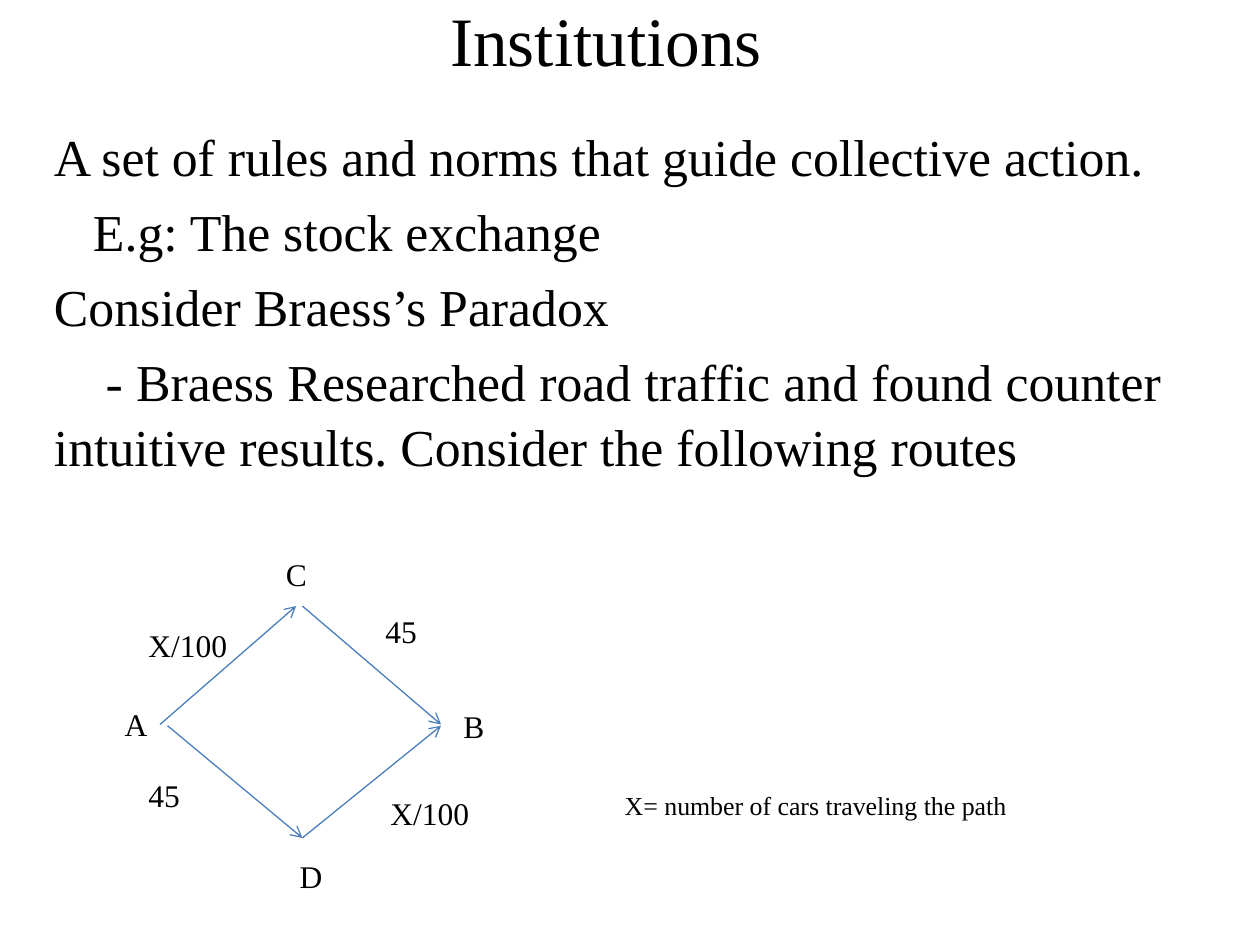
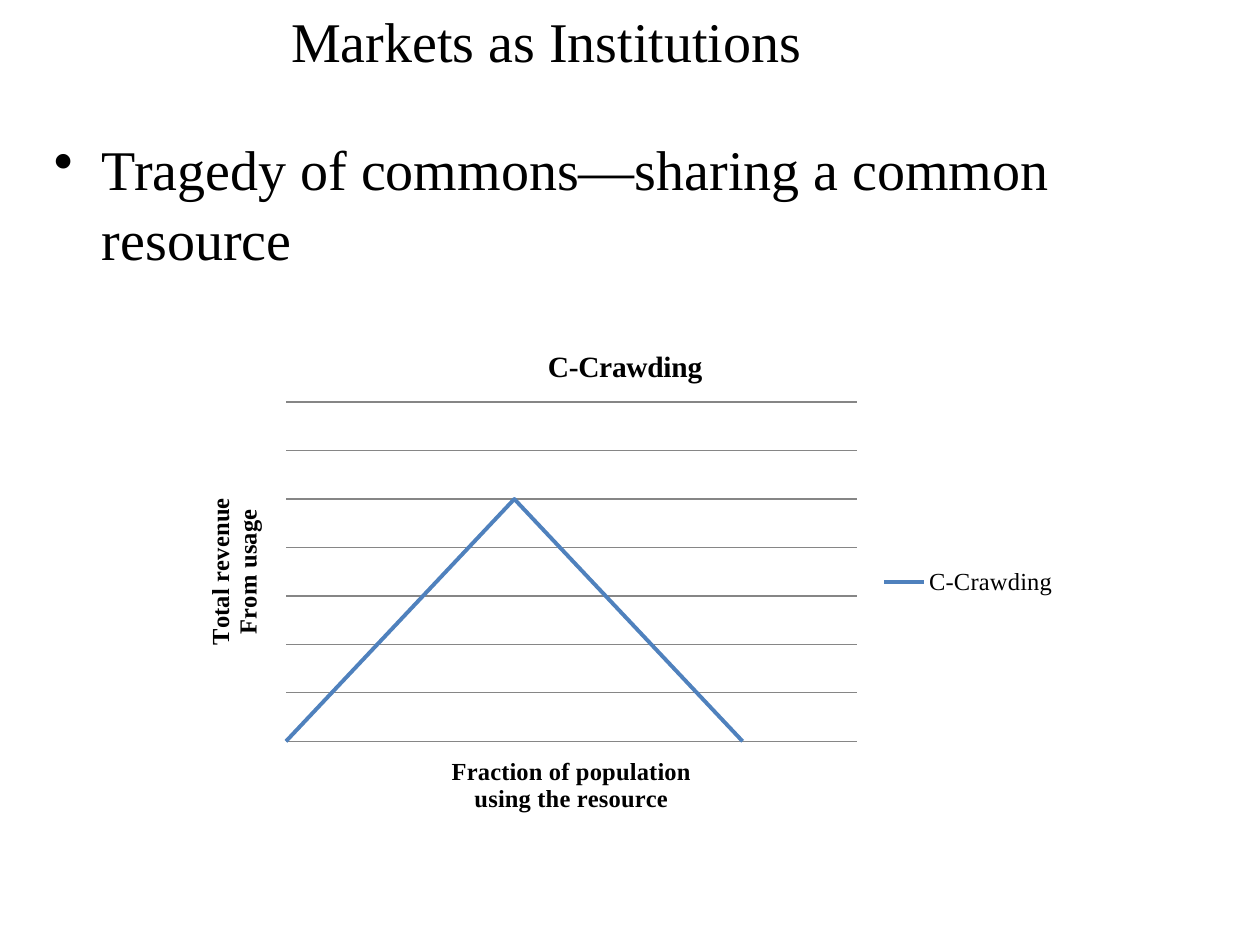
from lxml import etree
from pptx import Presentation
from pptx import util as u
from pptx.chart import data
from pptx.dml.color import RGBColor
from pptx.enum import chart as ch
from pptx.enum import shapes, text
from pptx.oxml import parse_xml
from pptx.oxml.ns import nsdecls, qn

FONT = "Times New Roman"
BLACK = RGBColor(0x00, 0x00, 0x00)
ARROW_BLUE = RGBColor(0x4B, 0x7E, 0xBC)
CURVE_BLUE = RGBColor(0x4F, 0x81, 0xBD)
GRID_GREY = RGBColor(0x86, 0x86, 0x86)
LEFT, CENTER, JUSTIFY = (text.PP_ALIGN.LEFT, text.PP_ALIGN.CENTER,
                         text.PP_ALIGN.JUSTIFY)


def write(frame, words, size=18, bold=False, align=None, before=None,
          spacing=None, margin=0, indent=0, bullet=None):
    """Add one formatted paragraph, filling the first one if it is empty."""
    first = frame.paragraphs[0]
    para = frame.add_paragraph() if first.runs else first
    run = para.add_run()
    run.text = words
    font = run.font
    font.name, font.size, font.bold = FONT, u.Pt(size), bold
    font.color.rgb = BLACK
    if align is not None:
        para.alignment = align
    if before is not None:
        para.space_before = u.Pt(before)
    if spacing is not None:
        para.line_spacing = spacing
    if margin or indent:
        props = para._p.get_or_add_pPr()
        props.set("marL", str(u.Inches(margin)))
        props.set("indent", str(u.Inches(indent)))
    if bullet:
        etree.SubElement(para._p.get_or_add_pPr(), qn("a:buChar")).set("char", bullet)


def place(shape, left, top, width, height, anchor=text.MSO_ANCHOR.TOP, wrap=True):
    """Position a text shape and return its frame."""
    shape.left, shape.top = u.Inches(left), u.Inches(top)
    shape.width, shape.height = u.Inches(width), u.Inches(height)
    frame = shape.text_frame
    frame.word_wrap = wrap
    frame.auto_size = text.MSO_AUTO_SIZE.NONE
    frame.vertical_anchor = anchor
    return frame


prs = Presentation()
prs.slide_width, prs.slide_height = u.Inches(10), u.Inches(7.5)
title_only = prs.slide_layouts[5]

# Slide 1: institutions and Braess's paradox
institutions = prs.slides.add_slide(title_only)
heading = place(institutions.shapes.title, 1.02, 0, 7.58, 0.62,
                text.MSO_ANCHOR.MIDDLE)
write(heading, "Institutions", size=39.6, align=CENTER)

body = place(institutions.shapes.add_textbox(0, 0, 0, 0), 0.33, 0.92, 9, 3.2)
for statement, indent, align in [
    ("A set of rules and norms that guide collective action.", 0, LEFT),
    ("E.g: The stock exchange", 0.31, LEFT),
    ("Consider Braess’s Paradox", 0, LEFT),
    ("- Braess Researched road traffic and found counter intuitive results. "
     "Consider the following routes", 0.41, JUSTIFY),
]:
    write(body, statement, size=29.6, align=align, before=5.92, spacing=1.04,
          indent=indent)

# Junctions and travel times of the road network
for label, left, top, width in [
    ("C", 2.17, 4.36, 0.4), ("A", 0.89, 5.55, 0.4),
    ("D", 2.28, 6.75, 0.4), ("B", 3.58, 5.56, 0.4),
    ("X/100", 1.08, 4.92, 1), ("X/100", 3, 6.25, 1),
    ("45", 2.96, 4.81, 0.54), ("45", 1.08, 6.11, 0.5),
]:
    write(place(institutions.shapes.add_textbox(0, 0, 0, 0),
                left, top, width, 0.4, wrap=False), label)

car_note = place(institutions.shapes.add_textbox(0, 0, 0, 0), 4.86, 6.22, 3.6, 0.36)
write(car_note, "X= number of cars traveling the path", size=14.8)

# Roads
for x1, y1, x2, y2 in [
    (1.27, 5.75, 2.35, 4.81), (1.33, 5.76, 2.4, 6.65),
    (2.4, 6.65, 3.5, 5.76), (2.4, 4.81, 3.5, 5.75),
]:
    road = institutions.shapes.add_connector(
        shapes.MSO_CONNECTOR.STRAIGHT,
        u.Inches(x1), u.Inches(y1), u.Inches(x2), u.Inches(y2))
    road.line.color.rgb = ARROW_BLUE
    road.line.width = u.Pt(0.75)
    etree.SubElement(road.line._get_or_add_ln(), qn("a:tailEnd")).set("type", "arrow")
    etree.SubElement(road._element.spPr, qn("a:effectLst"))

# Slide 2: markets and the tragedy of the commons
markets = prs.slides.add_slide(title_only)
heading = place(markets.shapes.title, 2.21, 0, 5.58, 0.64)
write(heading, "Markets as Institutions", size=32, align=LEFT)

commons = place(markets.shapes.add_textbox(0, 0, 0, 0), 0.33, 1, 9.08, 1.4)
write(commons, "Tragedy of commons—sharing a common resource", size=32,
      before=6.4, spacing=1.04, margin=0.38, indent=-0.38, bullet="•")

# Crowding curve
crowding = data.XyChartData()
curve_points = crowding.add_series("C-Crawding")
for fraction, revenue in [(0, 0), (1, 100), (2, 0)]:
    curve_points.add_data_point(fraction, revenue)
chart = markets.shapes.add_chart(
    ch.XL_CHART_TYPE.XY_SCATTER_SMOOTH_NO_MARKERS,
    u.Inches(1.42), u.Inches(2.58), u.Inches(7.08), u.Inches(4.08), crowding).chart
chart.font.name, chart.font.size = FONT, u.Pt(14)
chart.font.color.rgb = BLACK
chart.has_title = True
write(chart.chart_title.text_frame, "C-Crawding", size=16.8, bold=True)
chart.chart_title.include_in_layout = False
chart.has_legend = True
chart.legend.position = ch.XL_LEGEND_POSITION.RIGHT
chart.legend.include_in_layout = False

plot = chart.plots[0]
plot.vary_by_categories = False
curve = plot.series[0]
curve.smooth = True
curve.marker.style = ch.XL_MARKER_STYLE.NONE
curve.format.line.color.rgb = CURVE_BLUE
curve.format.line.width = u.Pt(2.25)

# Hidden axes keep their titles
for axis, top_value, step, caption in [
    (chart.category_axis, 2.5, 0.5, ("Fraction of population", "using the resource")),
    (chart.value_axis, 120 + 20, 20, ("Total revenue", "From usage")),
]:
    axis.minimum_scale, axis.maximum_scale, axis.major_unit = 0, top_value, step
    axis.has_major_gridlines = False
    axis.has_title = True
    for line in caption:
        write(axis.axis_title.text_frame, line, size=14, bold=True)
    axis.visible = False
chart.value_axis.axis_title.text_frame._txBody.bodyPr.set("rot", "-5400000")
chart.value_axis.axis_title.text_frame._txBody.bodyPr.set("vert", "horz")
chart.value_axis.has_major_gridlines = True
gridline = chart.value_axis.major_gridlines.format.line
gridline.color.rgb = GRID_GREY
gridline.width = u.Pt(0.75)

# Fixed inner plot area
plot_area = chart._chartSpace.chart.plotArea
for old_layout in plot_area.findall(qn("c:layout")):
    plot_area.remove(old_layout)
plot_area.insert(0, parse_xml(
    f'<c:layout {nsdecls("c")}><c:manualLayout><c:layoutTarget val="inner"/>'
    '<c:xMode val="edge"/><c:yMode val="edge"/><c:x val="0.12"/><c:y val="0.15"/>'
    '<c:w val="0.64"/><c:h val="0.66"/></c:manualLayout></c:layout>'))

prs.save("out.pptx")
